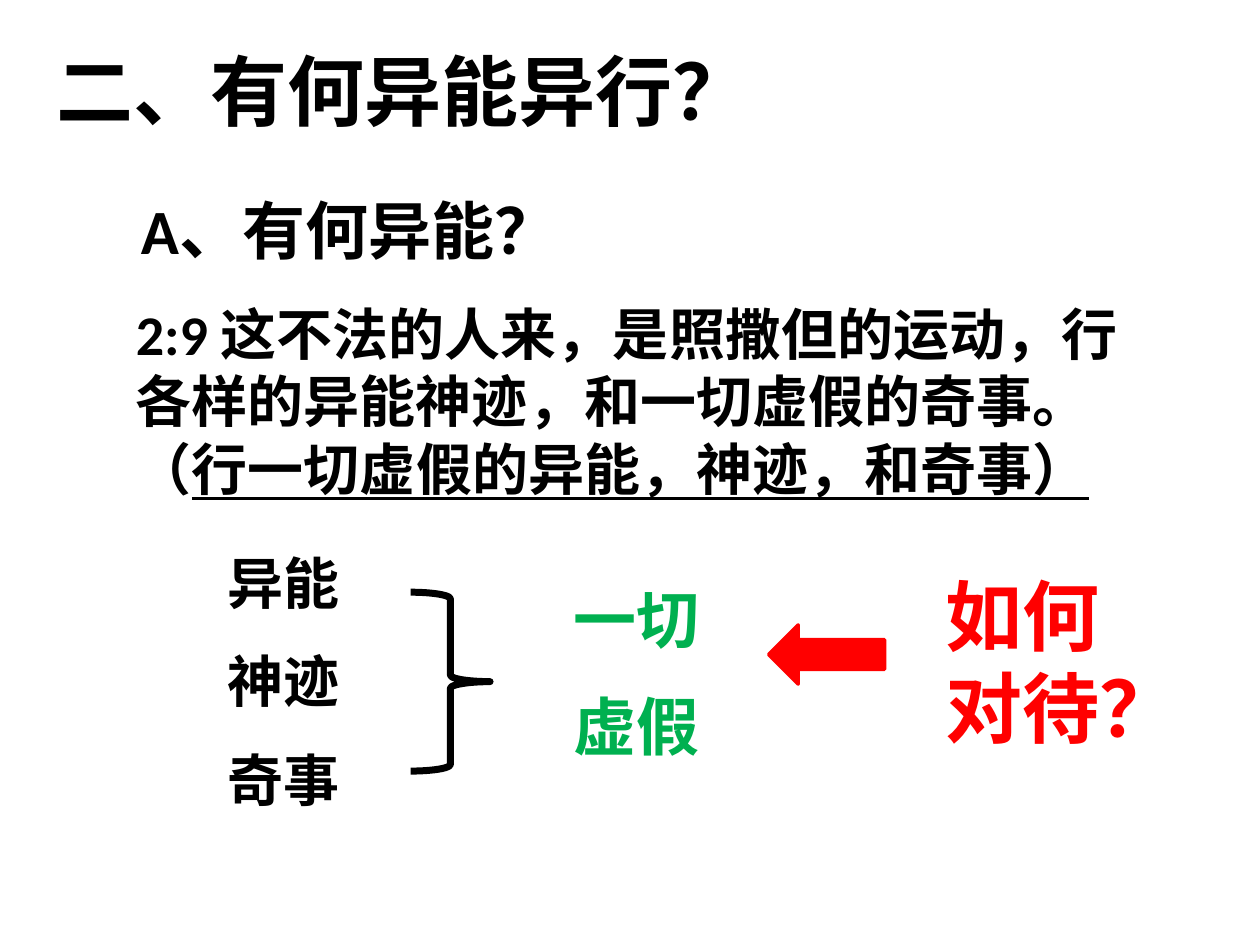
from dataclasses import dataclass

from pptx import Presentation
from pptx.dml.color import RGBColor
from pptx.enum import shapes, text
from pptx.util import Inches, Pt


@dataclass(frozen=True)
class Theme:
    font: str = "Calibri"
    ink: RGBColor = RGBColor(0, 0, 0)
    green: RGBColor = RGBColor(0x00, 0xB0, 0x50)
    red: RGBColor = RGBColor(0xFF, 0, 0)
    large: int = 44
    medium: int = 36
    body: int = 32
    gap: int = 18


THEME = Theme()


def style(para, size, color):
    para.alignment = text.PP_ALIGN.LEFT
    para.space_after = Pt(THEME.gap)
    para.font.name = THEME.font
    para.font.size = Pt(size)
    para.font.bold = True
    para.font.color.rgb = color


def add_text(parent, box, lines, size, color=THEME.ink):
    """Add a wrapping text box with one paragraph per line; return its frame."""
    frame = parent.add_textbox(*map(Inches, box)).text_frame
    frame.word_wrap = True
    frame.text = "\n".join(lines)
    for para in frame.paragraphs:
        style(para, size, color)
    return frame


def add_outlined(parent, preset, box, color, width):
    shape = parent.add_shape(preset, *map(Inches, box))
    shape.shadow.inherit = False
    shape.line.color.rgb = color
    shape.line.width = Pt(width)
    return shape


def place_title(page, box, words):
    title = page.shapes.title
    title.left, title.top, title.width, title.height = map(Inches, box)
    title.text_frame.text = words
    title.text_frame.vertical_anchor = text.MSO_ANCHOR.MIDDLE
    style(title.text_frame.paragraphs[0], THEME.large, THEME.ink)


def place_verse(page, box):
    frame = add_text(
        page.shapes, box,
        ["2:9 这不法的人来，是照撒但的运动，行各样的异能神迹，和一切虚假的奇事。（"],
        THEME.body)
    span = frame.paragraphs[0].add_run()
    span.text = "行一切虚假的异能，神迹，和奇事）"
    span.font.underline = True


def place_summary(page, box):
    """Three works, braced together into one verdict."""
    left, top, _, height = box
    add_text(page.shapes, (left, top, 1.17, height), ["异能", "神迹", "奇事"], THEME.body)
    brace = add_outlined(page.shapes, shapes.MSO_SHAPE.RIGHT_BRACE,
                         (left + 1.55, top + 0.4, 0.63, 1.42), THEME.ink, 4)
    brace.fill.background()
    add_text(page.shapes, (left + 2.74, top + 0.26, 1.49, 1.57),
             ["一切", "虚假"], THEME.medium, THEME.green)


def place_question(page, box):
    """Group of a red arrow and the question it comes from."""
    left, top, width, height = box
    group = page.shapes.add_group_shape().shapes
    arrow = add_outlined(group, shapes.MSO_SHAPE.LEFT_ARROW,
                         (left, top + 0.5, 0.92, 0.47), THEME.red, 2)
    arrow.fill.solid()
    arrow.fill.fore_color.rgb = THEME.red
    add_text(group, (left + 1.31, top, width - 1.31, height),
             ["如何对待？"], THEME.large, THEME.red)


def main():
    deck = Presentation()
    deck.slide_width, deck.slide_height = Inches(10), Inches(7.5)
    title_only = deck.slide_layouts[5]
    page = deck.slides.add_slide(title_only)
    place_title(page, (0.35, 0.09, 9, 1.25), "二、有何异能异行？")
    add_text(page.shapes, (1.02, 1.47, 5.83, 0.71), ["A、有何异能？"], THEME.medium)
    place_verse(page, (0.98, 2.33, 8.19, 1.72))
    place_summary(page, (1.71, 4.3, 4.23, 2.22))
    place_question(page, (6.1, 4.46, 2.94, 1.58))
    deck.save("out.pptx")


if __name__ == "__main__":
    main()
